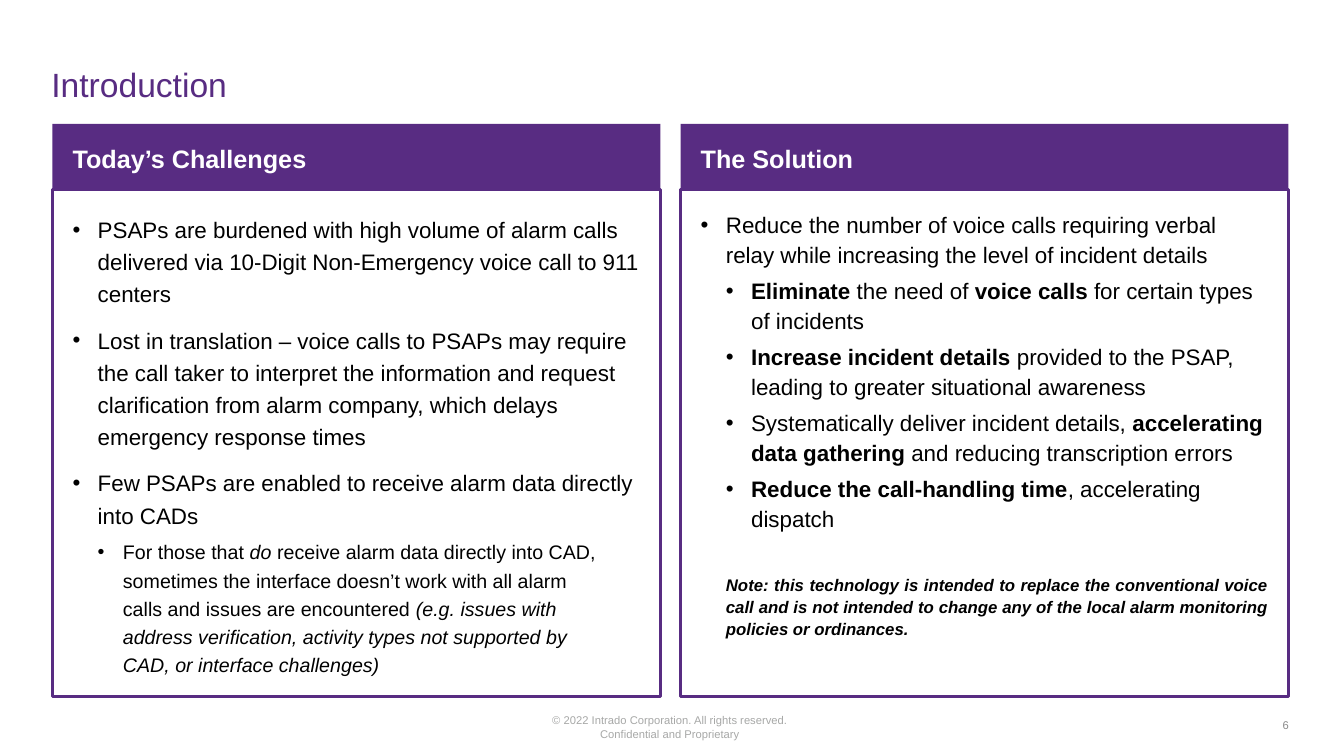
from pptx import Presentation
from pptx import util as u
from pptx.dml.color import RGBColor
from pptx.enum import shapes, text
from lxml import etree

# Content: a paragraph is (style, runs), a run is (words, marks)
PANELS = [
    ("Today’s Challenges", 2.09, 1.2, [
        ("first", [("PSAPs are burdened with high volume of alarm calls delivered via "
                    "10-Digit Non-Emergency voice call to 911 centers", "")]),
        ("point", [("Lost in translation – voice calls to PSAPs may require the call taker "
                    "to interpret the information and request clarification from alarm "
                    "company, which delays emergency response times", "")]),
        ("point", [("Few PSAPs are enabled to receive alarm data directly into CADs", "")]),
        ("detail", [("For those that ", ""), ("do ", "i"),
                    ("receive alarm data directly into CAD, sometimes the interface doesn’t "
                     "work with all alarm calls and issues are encountered ", ""),
                    ("(e.g. issues with address verification, activity types not supported "
                     "by CAD, or interface challenges)", "i")]),
    ]),
    ("The Solution", 2.07, 1.1, [
        ("first", [("Reduce the number of voice calls requiring verbal relay while "
                    "increasing the level of incident details", "")]),
        ("sub", [("Eliminate ", "b"), ("the need of ", ""), ("voice calls ", "b"),
                 ("for certain types of incidents", "")]),
        ("sub", [("Increase incident details ", "b"),
                 ("provided to the PSAP, leading to greater situational awareness", "")]),
        ("sub", [("Systematically deliver incident details, ", ""),
                 ("accelerating data gathering ", "b"),
                 ("and reducing transcription errors", "")]),
        ("sub", [("Reduce the call-handling time", "b"), (", accelerating dispatch", "")]),
        ("note", [("Note: this technology is intended to replace the conventional voice call "
                   "and is not intended to change any of the local alarm monitoring policies "
                   "or ordinances.", "bi")]),
    ]),
]
FOOTER = ["© 2022 Intrado Corporation. All rights reserved.", "Confidential and Proprietary"]

# Formats: size, space before, left margin, hanging indent, right margin
STYLES = {
    "first": (16, 0, 0.26, 0.25, 0),
    "point": (16, 10, 0.26, 0.25, 0),
    "sub": (16, 5, 0.51, 0.25, 0),
    "detail": (14, 5, 0.51, 0.25, 0.38),
    "note": (12, 29, 0.26, 0, 0),
}
PURPLE, WHITE, BLACK = "582C82", "FFFFFF", "000000"
LEFT, TOP, PANEL_W, GAP = 0.52, 1.23, 6.03, 0.2
HEAD_H, BODY_H, PAD, TEXT_W = 0.65, 5.03, 0.19, 5.64

deck = Presentation()
deck.slide_width, deck.slide_height = u.Inches(13.33), u.Inches(7.5)
page = deck.slides.add_slide(deck.slide_layouts[6])


def color(value):
    return RGBColor.from_string(value)


def set_all(target, values):
    for name, value in values.items():
        setattr(target, name, value)


def add_span(para, words, size, ink, marks=""):
    span = para.add_run()
    span.text = words
    set_all(span.font, {"name": "Arial", "size": u.Pt(size),
                        "bold": "b" in marks, "italic": "i" in marks})
    span.font.color.rgb = color(ink)


def add_text(x, y, w, h):
    box = page.shapes.add_textbox(*map(u.Inches, (x, y, w, h)))
    set_all(box.text_frame, {"word_wrap": True, "margin_left": 0, "margin_right": 0,
                             "margin_top": 0, "margin_bottom": 0})
    return box.text_frame


def add_rect(x, y, w, h):
    rect = page.shapes.add_shape(shapes.MSO_SHAPE.RECTANGLE, *map(u.Inches, (x, y, w, h)))
    rect.shadow.inherit = False
    return rect


def next_para(frame, index):
    return frame.add_paragraph() if index else frame.paragraphs[0]


def indent(para, left, hang, right):
    props = para._p.get_or_add_pPr()
    for name, value in {"marL": left, "indent": -hang, "marR": right}.items():
        props.set(name, str(u.Inches(value)))
    if hang:
        space = "{http://schemas.openxmlformats.org/drawingml/2006/main}"
        etree.SubElement(props, space + "buFont", typeface="Arial")
        etree.SubElement(props, space + "buChar", char="•")


# Title
title = add_text(0.51, 0.63, 1.8, 0.43)
add_span(title.paragraphs[0], "Introduction", 24, PURPLE)

# Panels: frame, heading bar, bullets
for column, (heading, text_top, spacing, points) in enumerate(PANELS):
    x = LEFT + column * (PANEL_W + GAP)
    frame = add_rect(x, TOP + HEAD_H, PANEL_W, BODY_H)
    frame.fill.background()
    frame.line.color.rgb = color(PURPLE)
    frame.line.width = u.Pt(2)

    bar = add_rect(x, TOP, PANEL_W, HEAD_H)
    bar.fill.solid()
    bar.fill.fore_color.rgb = color(PURPLE)
    bar.line.fill.background()
    set_all(bar.text_frame, {"margin_left": u.Inches(0.2), "margin_top": u.Inches(0.09),
                             "vertical_anchor": text.MSO_ANCHOR.MIDDLE})
    bar.text_frame.paragraphs[0].alignment = text.PP_ALIGN.LEFT
    add_span(bar.text_frame.paragraphs[0], heading, 18, WHITE, "b")

    body = add_text(x + PAD, text_top, TEXT_W, TOP + HEAD_H + BODY_H - text_top - PAD)
    for index, (style, spans) in enumerate(points):
        size, before, left, hang, right = STYLES[style]
        para = next_para(body, index)
        set_all(para, {"line_spacing": spacing, "space_before": u.Pt(before)})
        if style == "note":
            para.alignment = text.PP_ALIGN.JUSTIFY
        indent(para, left, hang, right)
        for words, marks in spans:
            add_span(para, words, size, BLACK, marks)

# Footer and page number
footer = add_text(5.46, 7.08, 2.37, 0.29)
for index, words in enumerate(FOOTER):
    para = next_para(footer, index)
    para.alignment = text.PP_ALIGN.CENTER
    add_span(para, words, 8, "A7A8A7")
number = add_text(12.72, 7.13, 0.12, 0.15)
add_span(number.paragraphs[0], "6", 8, "8A8A8A")

deck.save("out.pptx")
